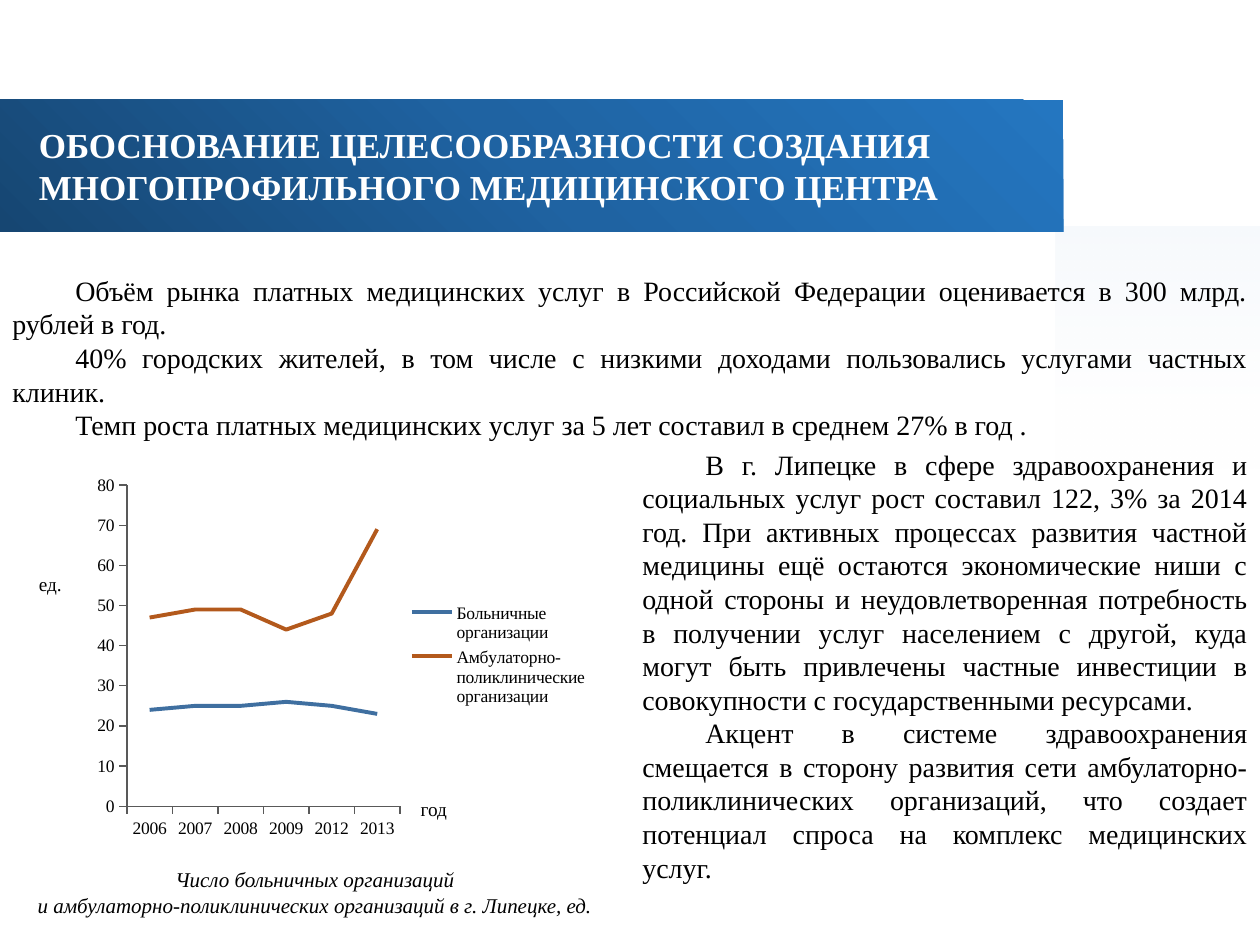
from lxml import etree
from pptx import Presentation
from pptx.chart.data import CategoryChartData
from pptx.dml.color import RGBColor
from pptx.enum.chart import XL_CHART_TYPE, XL_LEGEND_POSITION, XL_TICK_MARK
from pptx.enum.shapes import MSO_SHAPE
from pptx.enum.text import MSO_ANCHOR, MSO_AUTO_SIZE, PP_ALIGN
from pptx.oxml import parse_xml
from pptx.oxml.ns import nsdecls, qn
from pptx.util import Pt

RECT = MSO_SHAPE.RECTANGLE
LINE = XL_CHART_TYPE.LINE
RIGHT = XL_LEGEND_POSITION.RIGHT
OUT = XL_TICK_MARK.OUTSIDE
NONE = XL_TICK_MARK.NONE
TOP, MIDDLE = MSO_ANCHOR.TOP, MSO_ANCHOR.MIDDLE
GROW = MSO_AUTO_SIZE.SHAPE_TO_FIT_TEXT
LEFT, CENTER, FULL = PP_ALIGN.LEFT, PP_ALIGN.CENTER, PP_ALIGN.JUSTIFY
FONT = "Times New Roman"
color = RGBColor.from_string


def shade(shape, stops, tail):
    shape.shadow.inherit = False
    shape.line.fill.background()
    shape.fill.solid()
    marks = "".join(
        f'<a:gs pos="{pos * 1000}"><a:srgbClr val="{tone}">{alpha}</a:srgbClr></a:gs>'
        for pos, tone, alpha in stops)
    grad = parse_xml(f'<a:gradFill {nsdecls("a")} rotWithShape="1">'
                     f'<a:gsLst>{marks}</a:gsLst>{tail}</a:gradFill>')
    props = shape.fill._xPr
    props.replace(props.find(qn("a:solidFill")), grad)


def write(shape, lines, size, align, tone="000000", bold=False, italic=False, indent=0):
    frame = shape.text_frame
    frame.word_wrap = True
    frame.vertical_anchor = TOP
    for i, line in enumerate(lines):
        para = frame.add_paragraph() if i else frame.paragraphs[0]
        para.alignment = align
        if indent:
            para._p.get_or_add_pPr().set("indent", str(Pt(indent)))
        run = para.add_run()
        run.text = line
        font = run.font
        font.name, font.size = FONT, Pt(size)
        font.bold, font.italic = bold, italic
        font.color.rgb = color(tone)


prs = Presentation()
prs.slide_width, prs.slide_height = Pt(720), Pt(540)
slide = prs.slides.add_slide(prs.slide_layouts[6])
shapes = slide.shapes

side = shapes.add_shape(RECT, Pt(603.36), Pt(129.6), Pt(116.64), Pt(138.24))
clear = '<a:alpha val="0"/>'
shade(side, [(0, "F7FAFD", ""), (74, "FFFFFF", ""), (100, "FFFFFF", clear)],
      '<a:lin ang="5400000" scaled="1"/>')

band = shapes.add_shape(RECT, Pt(0), Pt(56.9), Pt(607.7), Pt(75.6))
shade(band, [(0, "164672", ""), (50, "1F63A2", ""), (100, "2476C0", "")],
      '<a:path path="circle"><a:fillToRect t="100000" r="100000"/></a:path>')
write(band, ["ОБОСНОВАНИЕ ЦЕЛЕСООБРАЗНОСТИ СОЗДАНИЯ",
             "МНОГОПРОФИЛЬНОГО МЕДИЦИНСКОГО ЦЕНТРА"], 20, LEFT, "FFFFFF", bold=True)
band.text_frame.vertical_anchor = MIDDLE
band.text_frame.margin_left = Pt(22.2)

market = [
    "Объём рынка платных медицинских услуг в Российской Федерации оценивается в 300 млрд. рублей в год.",
    "40% городских жителей, в том числе с низкими доходами пользовались услугами частных клиник.",
    "Темп роста платных медицинских услуг за 5 лет составил в среднем 27% в год .",
]
city = [
    "В г. Липецке в сфере здравоохранения и социальных услуг рост составил 122, 3% за 2014 год. "
    "При активных процессах развития частной медицины ещё остаются экономические ниши с одной стороны "
    "и неудовлетворенная потребность в получении услуг населением с другой, куда могут быть привлечены "
    "частные инвестиции в совокупности с государственными ресурсами.",
    "Акцент в системе здравоохранения смещается в сторону развития сети "
    "амбулаторно-поликлинических организаций, что создает потенциал спроса на комплекс медицинских услуг.",
]
title = ["Число больничных организаций",
         "и амбулаторно-поликлинических организаций в г. Липецке, ед."]
for x, y, w, h, lines, size, align, italic, indent in [
    (0, 152.7, 720, 104.3, market, 16, FULL, False, 36),
    (-14, 491.8, 388, 36, title, 12, CENTER, True, 0),
    (360, 252, 360, 259.2, city, 16, FULL, False, 36),
]:
    box = shapes.add_textbox(Pt(x), Pt(y), Pt(w), Pt(h))
    write(box, lines, size, align, italic=italic, indent=indent)
    box.text_frame.auto_size = GROW

data = CategoryChartData()
data.categories = ["2006", "2007", "2008", "2009", "2012", "2013"]
data.add_series("Больничные организации", [24, 25, 25, 26, 25, 23])
data.add_series("Амбулаторно-поликлинические организации", [47, 49, 49, 44, 48, 69])
chart = shapes.add_chart(LINE, Pt(48.96), Pt(266.4), Pt(294.5), Pt(216), data).chart
chart.has_title = False
chart.font.name, chart.font.size = FONT, Pt(10)
chart.font.color.rgb = color("000000")
plot = chart.plots[0]
plot.vary_by_categories = False
for row, tone in zip(plot.series, ["3F6FA0", "B3591C"]):
    row.smooth = False
    row.format.line.width = Pt(2.25)
    row.format.line.color.rgb = color(tone)

scale = chart.value_axis
scale.minimum_scale, scale.maximum_scale, scale.major_unit = 0, 80, 10
for axis in (chart.category_axis, scale):
    axis.has_major_gridlines = False
    axis.major_tick_mark, axis.minor_tick_mark = OUT, NONE
    axis.format.line.width = Pt(0.75)
    axis.format.line.color.rgb = color("595959")
    axis.tick_labels.font.name = FONT
    axis.tick_labels.font.size = Pt(10)

chart.has_legend = True
legend = chart.legend
legend.position = RIGHT
legend.include_in_layout = False
legend.font.name, legend.font.size = FONT, Pt(10)

area = chart._chartSpace.chart.plotArea
for old in area.findall(qn("c:layout")):
    area.remove(old)
for host, spot, inner, sizes in [
    (area, 0, True, (0.08, 0.05, 0.53, 0.85)),
    (legend._element, 1, False, (0.63, 0.35, 0.37, 0.3)),
]:
    layout = etree.Element(qn("c:layout"))
    manual = etree.SubElement(layout, qn("c:manualLayout"))
    if inner:
        etree.SubElement(manual, qn("c:layoutTarget"), val="inner")
    for key in ("xMode", "yMode"):
        etree.SubElement(manual, qn("c:" + key), val="edge")
    for key, size in zip("xywh", sizes):
        etree.SubElement(manual, qn("c:" + key), val=str(size))
    host.insert(spot, layout)

for x, y, word in [(15.1, 323.3, "ед."), (233.3, 452.2, "год")]:
    tag = shapes.add_shape(RECT, Pt(x), Pt(y), Pt(35.3), Pt(27.4))
    tag.shadow.inherit = False
    tag.fill.solid()
    tag.fill.fore_color.rgb = color("FFFFFF")
    tag.line.color.rgb = color("FFFFFF")
    tag.line.width = Pt(0.75)
    write(tag, [word], 11, LEFT)

prs.save("out.pptx")
